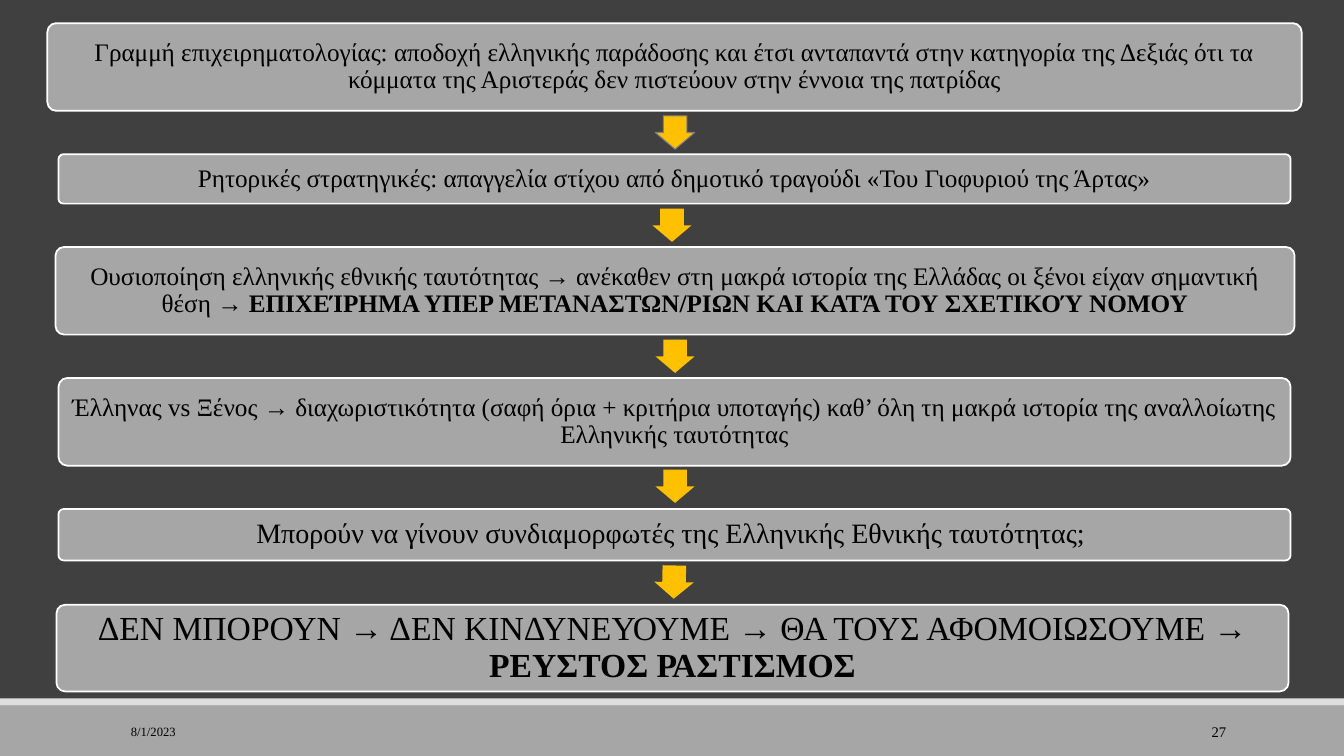
from dataclasses import dataclass
from typing import Optional

from pptx import Presentation
from pptx.dml.color import RGBColor
from pptx.enum.shapes import MSO_SHAPE as Kind
from pptx.enum.text import MSO_ANCHOR as Anchor, PP_ALIGN as Align
from pptx.util import Emu, Pt

SCALE = 9144
FONT = "Times New Roman"
DARK = RGBColor(0x40, 0x40, 0x40)
GREY = RGBColor(0xA6, 0xA6, 0xA6)
PALE = RGBColor(0xDD, 0xDD, 0xDD)
EDGE = RGBColor(0x80, 0x80, 0x80)
GOLD = RGBColor(0xFF, 0xC0, 0x00)
WHITE = RGBColor(0xFF, 0xFF, 0xFF)
BLACK = RGBColor(0x00, 0x00, 0x00)


@dataclass
class Step:
    left: int
    top: int
    width: int
    height: int
    text: str
    bold: str = ""
    size: int = 18
    inset: int = 7


@dataclass
class Arrow:
    left: int
    top: int
    turn: float = 90
    edge: Optional[RGBColor] = None


@dataclass
class Note:
    left: int
    width: int
    text: str
    size: float
    align: Align


STEPS = [
    Step(47, 23, 1244, 87, "Γραμμή επιχειρηματολογίας: αποδοχή ελληνικής παράδοσης και έτσι "
         "ανταπαντά στην κατηγορία της Δεξιάς ότι τα κόμματα της Αριστεράς δεν πιστεύουν "
         "στην έννοια της πατρίδας"),
    Step(58, 153, 1222, 49, "Ρητορικές στρατηγικές: απαγγελία στίχου από δημοτικό τραγούδι "
         "«Του Γιοφυριού της Άρτας»"),
    Step(55, 245, 1229, 87, "Ουσιοποίηση ελληνικής εθνικής ταυτότητας → ανέκαθεν στη μακρά "
         "ιστορία της Ελλάδας οι ξένοι είχαν σημαντική θέση ",
         "→ ΕΠΙΧΕΊΡΗΜΑ ΥΠΕΡ ΜΕΤΑΝΑΣΤΩΝ/ΡΙΩΝ ΚΑΙ ΚΑΤΆ ΤΟΥ ΣΧΕΤΙΚΟΎ ΝΟΜΟΥ"),
    Step(58, 375, 1222, 87, "Έλληνας vs Ξένος → διαχωριστικότητα (σαφή όρια + κριτήρια "
         "υποταγής) καθ’ όλη τη μακρά ιστορία της αναλλοίωτης Ελληνικής ταυτότητας"),
    Step(58, 505, 1222, 51, "Μπορούν να γίνουν συνδιαμορφωτές της Ελληνικής Εθνικής "
         "ταυτότητας; ", size=20, inset=8),
    Step(56, 600, 1222, 86, "ΔΕΝ ΜΠΟΡΟΥΝ → ΔΕΝ ΚΙΝΔΥΝΕΥΟΥΜΕ → ΘΑ ΤΟΥΣ ΑΦΟΜΟΙΩΣΟΥΜΕ → ",
         "ΡΕΥΣΤΟΣ ΡΑΣΤΙΣΜΟΣ", 24, 10),
]
ARROWS = [
    Arrow(653, 112, edge=EDGE),
    Arrow(650, 204),
    Arrow(653, 334),
    Arrow(653, 463),
    Arrow(652, 558, 91.2),
]
NOTES = [
    Note(120, 270, "8/1/2023", 9, Align.LEFT),
    Note(1083, 143, "27", 10.5, Align.RIGHT),
]


def px(count: int) -> Emu:
    return Emu(count * SCALE)


def add_form(slide, kind: Kind, left: int, top: int, width: int, height: int,
             fill: RGBColor, edge: Optional[RGBColor] = None, line: float = 0.75):
    form = slide.shapes.add_shape(kind, px(left), px(top), px(width), px(height))
    form.shadow.inherit = False
    form.fill.solid()
    form.fill.fore_color.rgb = fill
    if edge is None:
        form.line.fill.background()
    else:
        form.line.color.rgb = edge
        form.line.width = Pt(line)
    return form


def set_text(frame, text: str, size: float, align: Align, bold: str = "") -> None:
    frame.word_wrap = True
    frame.vertical_anchor = Anchor.MIDDLE
    frame.text = text
    para = frame.paragraphs[0]
    para.alignment = align
    if bold:
        run = para.add_run()
        run.text = bold
        run.font.bold = True
    for run in para.runs:
        run.font.name = FONT
        run.font.size = Pt(size)
        run.font.color.rgb = BLACK


def add_step(slide, step: Step) -> None:
    box = add_form(slide, Kind.ROUNDED_RECTANGLE, step.left, step.top, step.width,
                   step.height, GREY, WHITE, 1.25)
    box.adjustments[0] = 0.1
    frame = box.text_frame
    frame.margin_left = frame.margin_right = px(step.inset)
    frame.margin_top = frame.margin_bottom = px(step.inset)
    set_text(frame, step.text, step.size, Align.CENTER, step.bold)
    frame.paragraphs[0].line_spacing = 0.9


def add_arrow(slide, arrow: Arrow) -> None:
    form = add_form(slide, Kind.RIGHT_ARROW, arrow.left, arrow.top, 33, 39, GOLD, arrow.edge)
    form.adjustments[0] = 0.6
    form.adjustments[1] = 0.5
    form.rotation = arrow.turn


def add_note(slide, note: Note) -> None:
    box = slide.shapes.add_textbox(px(note.left), px(706), px(note.width), px(40))
    set_text(box.text_frame, note.text, note.size, note.align)


def main() -> None:
    deck = Presentation()
    deck.slide_width, deck.slide_height = px(1333), px(750)
    slide = deck.slides.add_slide(deck.slide_layouts[6])
    slide.background.fill.solid()
    slide.background.fill.fore_color.rgb = DARK
    add_form(slide, Kind.RECTANGLE, 0, 700, 1333, 50, GREY)
    add_form(slide, Kind.RECTANGLE, 0, 693, 1333, 7, PALE)
    for note in NOTES:
        add_note(slide, note)
    for step in STEPS:
        add_step(slide, step)
    for arrow in ARROWS:
        add_arrow(slide, arrow)
    deck.save("out.pptx")


if __name__ == "__main__":
    main()
